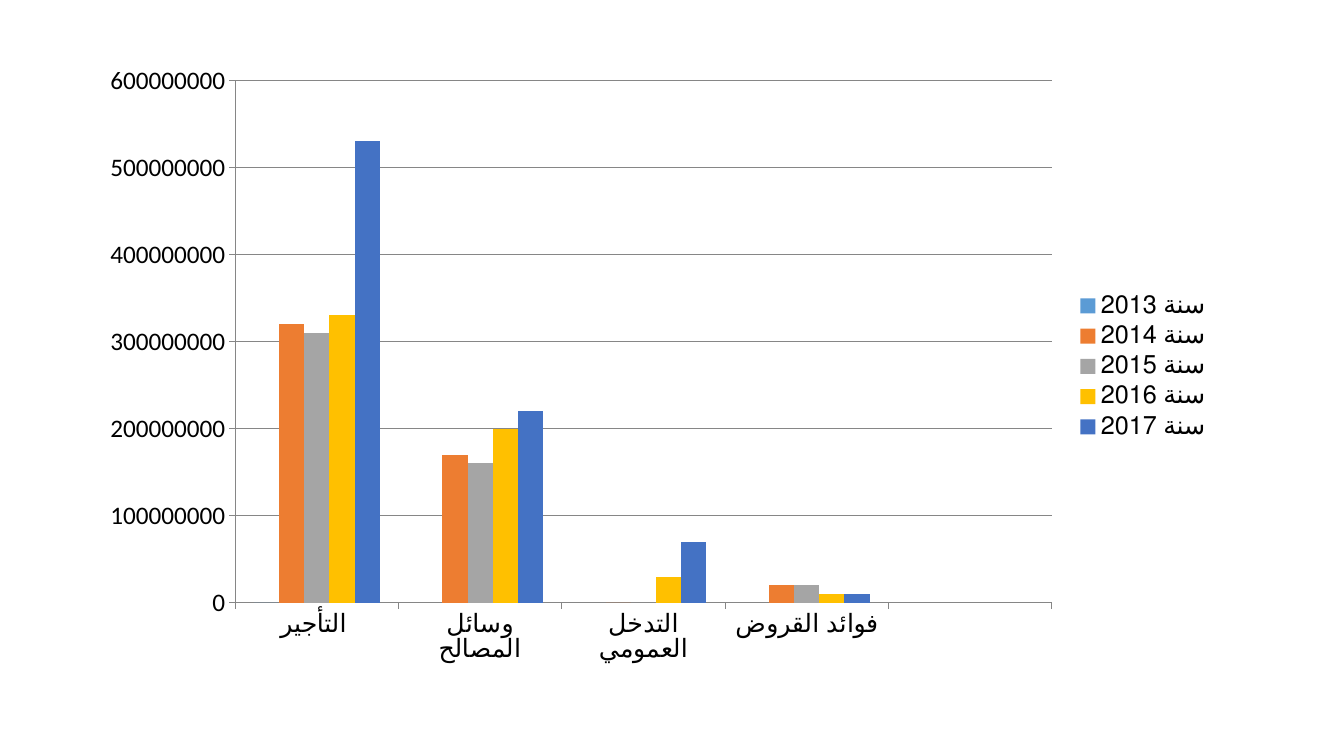
from lxml.etree import fromstring
from pptx import Presentation
from pptx.chart.data import CategoryChartData as Data
from pptx.dml.color import RGBColor as RGB
from pptx.enum.chart import XL_CHART_TYPE as Kind, XL_LEGEND_POSITION as Side
from pptx.enum.chart import XL_TICK_MARK as Tick
from pptx.util import Inches, Pt

BLACK = RGB(0x00, 0x00, 0x00)
GRAY = RGB(0x86, 0x86, 0x86)
BLUE = RGB(0x5B, 0x9B, 0xD5)
ORANGE = RGB(0xED, 0x7D, 0x31)
SILVER = RGB(0xA5, 0xA5, 0xA5)
GOLD = RGB(0xFF, 0xC0, 0x00)
NAVY = RGB(0x44, 0x72, 0xC4)
MILLION = 1000000

years = [
    ("سنة 2013", BLUE, [0, None, None, None, None]),
    ("سنة 2014", ORANGE, [320, 170, 0, 20, None]),
    ("سنة 2015", SILVER, [310, 160, 0, 20, None]),
    ("سنة 2016", GOLD, [330, 200, 30, 10, None]),
    ("سنة 2017", NAVY, [530, 220, 70, 10, None]),
]

deck = Presentation()
deck.slide_width = Inches(13.33)
deck.slide_height = Inches(7.5)
slide = deck.slides.add_slide(deck.slide_layouts[6])

data = Data(number_format="0")
data.categories = ["التأجير ", "وسائل المصالح", "التدخل العمومي", "فوائد القروض", ""]
for name, color, costs in years:
    data.add_series(name, [None if cost is None else cost * MILLION for cost in costs])

frame = slide.shapes.add_chart(
    Kind.COLUMN_CLUSTERED, Inches(0.87), Inches(0.55), Inches(11.25), Inches(6.17), data)
chart = frame.chart
chart.has_title = False
chart.font.name = "Calibri"
chart.font.size = Pt(18)
chart.font.color.rgb = BLACK

chart.has_legend = True
chart.legend.position = Side.RIGHT
chart.legend.include_in_layout = False

plot = chart.plots[0]
plot.gap_width = 150
plot.overlap = 0
plot.vary_by_categories = False
for bar, (name, color, costs) in zip(plot.series, years):
    bar.invert_if_negative = False
    bar.format.fill.solid()
    bar.format.fill.fore_color.rgb = color

for axis in (chart.category_axis, chart.value_axis):
    axis.major_tick_mark = Tick.OUTSIDE
    axis.minor_tick_mark = Tick.NONE
    axis.format.line.color.rgb = GRAY
    axis.format.line.width = Pt(0.75)

scale = chart.value_axis
scale.minimum_scale = 0
scale.maximum_scale = 600 * MILLION
scale.major_unit = 100 * MILLION
scale.has_major_gridlines = True
scale.major_gridlines.format.line.color.rgb = GRAY
scale.major_gridlines.format.line.width = Pt(0.75)

area = chart.element.find(".//{*}plotArea")
for old in area.findall("{*}layout"):
    area.remove(old)
area.insert(0, fromstring(
    '<c:layout xmlns:c="http://schemas.openxmlformats.org/drawingml/2006/chart">'
    '<c:manualLayout><c:layoutTarget val="inner"/>'
    '<c:xMode val="edge"/><c:yMode val="edge"/>'
    '<c:x val="0.13"/><c:y val="0.04"/><c:w val="0.72"/><c:h val="0.84"/>'
    '</c:manualLayout></c:layout>'))

deck.save("out.pptx")
